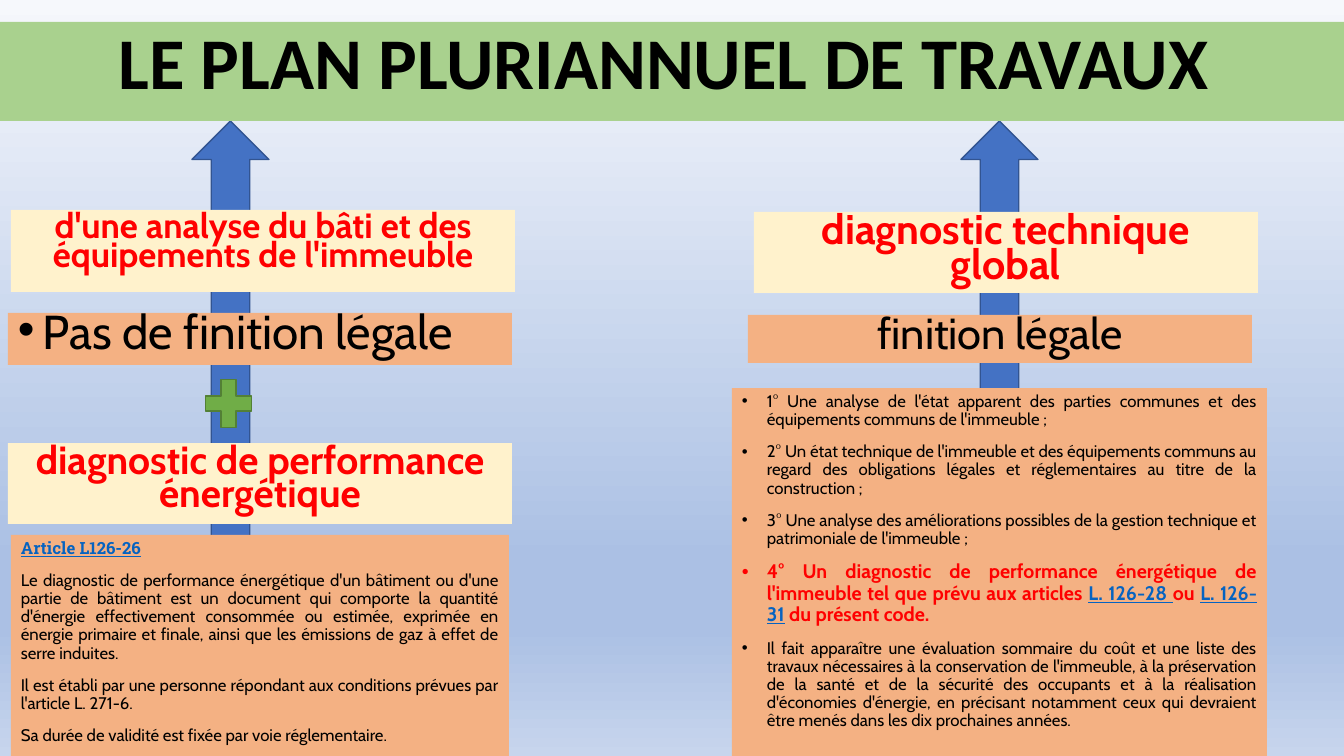
import pptx
import pptx.util
import pptx.dml.color
import pptx.enum.shapes
import pptx.enum.text
from lxml import etree

Shape = pptx.enum.shapes.MSO_SHAPE
Align = pptx.enum.text.PP_ALIGN
Pt = pptx.util.Pt

THEME = {
    "sky": [(0, "F6F8FC"), (74, "ABC0E4"), (83, "ABC0E4"), (100, "C7D5ED")],
    "fill": {"title": "A9D18E", "head": "FFF2CC", "body": "F4B183",
             "arrow": "4472C4", "plus": "70AD47"},
    "edge": {"arrow": "325491", "plus": "538035"},
    # style: font, size, colour, bold, underline
    "type": {
        "title": ("Calibri", 52, "000000", True, False),
        "head25": ("Cabin", 25, "FF0000", True, False),
        "head28": ("Cabin", 28, "FF0000", True, False),
        "head30": ("Cabin", 29.6, "FF0000", True, False),
        "note31": ("Cabin", 31, "000000", False, False),
        "note34": ("Cabin", 34, "000000", False, False),
        "text": ("Cabin", 12, "000000", False, False),
        "key": ("Cabin", 14, "FF0000", True, False),
        "link": ("Cabin", 14, "0563C1", True, True),
        "law": ("Roboto Slab", 12, "0563C1", True, True),
    },
}

ARTICLE = [
    [("Article L126-26", "law")],
    "Le diagnostic de performance énergétique d'un bâtiment ou d'une partie de bâtiment est un "
    "document qui comporte la quantité d'énergie effectivement consommée ou estimée, exprimée en "
    "énergie primaire et finale, ainsi que les émissions de gaz à effet de serre induites. ",
    "Il est établi par une personne répondant aux conditions prévues par l'article L. 271-6.",
    "Sa durée de validité est fixée par voie réglementaire.",
]
CONTENTS = [
    "1° Une analyse de l'état apparent des parties communes et des équipements communs de "
    "l'immeuble ;",
    "2° Un état technique de l'immeuble et des équipements communs au regard des obligations "
    "légales et réglementaires au titre de la construction ;",
    "3° Une analyse des améliorations possibles de la gestion technique et patrimoniale de "
    "l'immeuble ;",
    [("4° Un diagnostic de performance énergétique de l'immeuble tel que prévu aux articles ",
      "key"), ("L. 126-28 ", "link"), ("ou ", "key"), ("L. 126-31", "link"),
     (" du présent code.", "key")],
    "Il fait apparaître une évaluation sommaire du coût et une liste des travaux nécessaires à la "
    "conservation de l'immeuble, à la préservation de la santé et de la sécurité des occupants et "
    "à la réalisation d'économies d'énergie, en précisant notamment ceux qui devraient être menés "
    "dans les dix prochaines années.",
]

WIDE, HIGH = 1344, 756
ARROWS = [(192, 121, 77, 635), (961, 121, 77, 373)]
PLUS = (197, 371, 63, 65)
TIGHT, LOOSE = 0.7, 0.9
# place in px, fill, paragraphs, text format
BOXES = [
    ((0, 22, WIDE, 99), "title", ["LE PLAN PLURIANNUEL DE TRAVAUX "],
     {"style": "title", "gap": LOOSE}),
    ((11, 210, 504, 82), "head", ["d'une analyse du bâti et des équipements de l'immeuble"],
     {"style": "head25"}),
    ((8, 313, 504, 52), "body", ["Pas de finition légale"],
     {"style": "note34", "align": Align.LEFT, "dot": True}),
    ((8, 443, 504, 81), "head", ["diagnostic de performance énergétique"],
     {"style": "head28"}),
    ((11, 535, 498, 222), "body", ARTICLE,
     {"align": Align.JUSTIFY, "gap": LOOSE}),
    ((754, 212, 504, 81), "head", ["diagnostic technique global"], {"style": "head30"}),
    ((748, 315, 504, 48), "body", ["finition légale"], {"style": "note31"}),
    ((732, 388, 535, 371), "body", CONTENTS,
     {"align": Align.JUSTIFY, "gap": LOOSE, "dot": True}),
]

NS = "http://schemas.openxmlformats.org/drawingml/2006/main"


def px(n):
    return pptx.util.Emu(round(n * 914400 / 100.8))


def rgb(code):
    return pptx.dml.color.RGBColor.from_string(code)


def form(slide, kind, place, role):
    shape = slide.shapes.add_shape(kind, *map(px, place))
    shape.shadow.inherit = False
    shape.fill.solid()
    shape.fill.fore_color.rgb = rgb(THEME["fill"][role])
    if role in THEME["edge"]:
        shape.line.color.rgb = rgb(THEME["edge"][role])
        shape.line.width = Pt(1)
    else:
        shape.line.fill.background()
    return shape


def bullet(para):
    props = para._p.get_or_add_pPr()
    props.set("marL", str(px(25)))
    props.set("indent", str(-px(25)))
    etree.SubElement(props, f"{{{NS}}}buFont", typeface="Arial")
    etree.SubElement(props, f"{{{NS}}}buChar", char="•")


def write(shape, text, style="text", align=Align.CENTER, gap=TIGHT, dot=False):
    """Fill a shape with paragraphs, each a string or a list of (words, style) runs."""
    frame = shape.text_frame
    frame.word_wrap = True
    frame.vertical_anchor = pptx.enum.text.MSO_ANCHOR.TOP
    for i, item in enumerate(text):
        para = frame.add_paragraph() if i else frame.paragraphs[0]
        para.alignment = align
        para.line_spacing = gap
        para.space_before = Pt(10)
        if dot:
            bullet(para)
        for words, name in [(item, style)] if isinstance(item, str) else item:
            run = para.add_run()
            run.text = words
            face, size, hue, bold, under = THEME["type"][name]
            font = run.font
            font.name, font.size, font.bold = face, Pt(size), bold
            font.underline = under
            font.color.rgb = rgb(hue)


def paint(slide):
    """Give the background its vertical gradient of several stops."""
    fill = slide.background.fill
    fill.gradient()
    fill.gradient_angle = 270
    stops = slide._element.find(f".//{{{NS}}}gsLst")
    for old in list(stops):
        stops.remove(old)
    for part, hue in THEME["sky"]:
        stop = etree.SubElement(stops, f"{{{NS}}}gs", pos=str(part * 1000))
        etree.SubElement(stop, f"{{{NS}}}srgbClr", val=hue)


def main():
    deck = pptx.Presentation()
    deck.slide_width, deck.slide_height = px(WIDE), px(HIGH)
    slide = deck.slides.add_slide(deck.slide_layouts[6])
    paint(slide)
    for place in ARROWS:
        form(slide, Shape.UP_DOWN_ARROW, place, "arrow")
    for place, role, text, look in BOXES:
        write(form(slide, Shape.RECTANGLE, place, role), text, **look)
    form(slide, Shape.MATH_PLUS, PLUS, "plus")
    deck.save("out.pptx")


if __name__ == "__main__":
    main()
